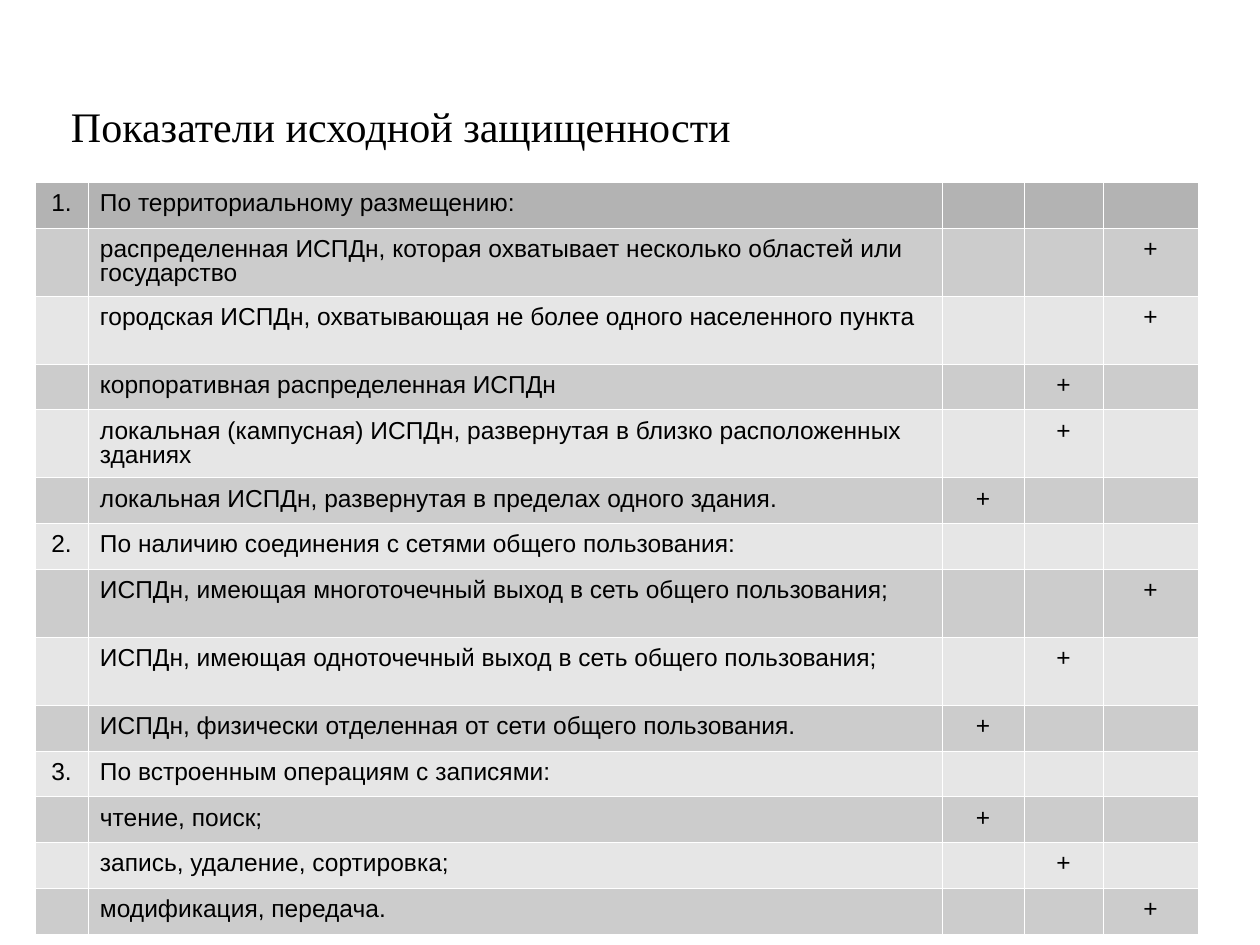
import dataclasses
import typing

import lxml.etree
import pptx
import pptx.dml.color
import pptx.enum.text
import pptx.oxml.ns
import pptx.util

SCALE = 914400 / 126
COLORS = {
    "ink": "000000",
    "line": "FFFFFF",
    "head": "B3B3B3",
    "dark": "CCCCCC",
    "light": "E6E6E6",
}
ALIGN = pptx.enum.text.PP_ALIGN
SHORT, TALL = 42, 68
COLS = (53, 854, 82, 79, 95)


@dataclasses.dataclass(frozen=True)
class Row:
    text: str
    mark: int = 0
    num: str = ""
    height: int = SHORT

    def cells(self) -> list[str]:
        return [self.num, self.text] + ["+" if self.mark == col else "" for col in (1, 2, 3)]


ROWS = (
    Row("По территориальному размещению:", num="1."),
    Row("распределенная ИСПДн, которая охватывает несколько областей или государство", 3, height=TALL),
    Row("городская ИСПДн, охватывающая не более одного населенного пункта", 3, height=TALL),
    Row("корпоративная распределенная ИСПДн", 2),
    Row("локальная (кампусная) ИСПДн, развернутая в близко расположенных зданиях", 2, height=TALL),
    Row("локальная ИСПДн, развернутая в пределах одного здания.", 1),
    Row("По наличию соединения с сетями общего пользования:", num="2."),
    Row("ИСПДн, имеющая многоточечный выход в сеть общего пользования;", 3, height=TALL),
    Row("ИСПДн, имеющая одноточечный выход в сеть общего пользования;", 2, height=TALL),
    Row("ИСПДн, физически отделенная от сети общего пользования.", 1),
    Row("По встроенным операциям с записями:", num="3."),
    Row("чтение, поиск;", 1),
    Row("запись, удаление, сортировка;", 2),
    Row("модификация, передача.", 3),
)


def px(size: int) -> int:
    return round(size * SCALE)


def apply(item: typing.Any, form: dict[str, typing.Any]) -> None:
    for name, value in form.items():
        setattr(item, name, value)


def rgb(name: str) -> pptx.dml.color.RGBColor:
    return pptx.dml.color.RGBColor.from_string(COLORS[name])


def write(par: typing.Any, text: str, face: str, size: int) -> None:
    run = par.add_run()
    run.text = text
    apply(run.font, {"name": face, "size": pptx.util.Pt(size), "bold": False})
    run.font.color.rgb = rgb("ink")


def border(cell: typing.Any) -> None:
    props = cell._tc.get_or_add_tcPr()
    name = pptx.oxml.ns.qn
    for side in ("lnL", "lnR", "lnT", "lnB"):
        line = lxml.etree.SubElement(props, name(f"a:{side}"), w="762")
        fill = lxml.etree.SubElement(line, name("a:solidFill"))
        lxml.etree.SubElement(fill, name("a:srgbClr"), val=COLORS["line"])


def draw_cell(cell: typing.Any, text: str, shade: str, align: typing.Any) -> None:
    apply(cell, {
        "margin_left": px(12),
        "margin_right": px(12),
        "margin_top": px(10),
        "margin_bottom": px(6),
    })
    border(cell)
    cell.fill.solid()
    cell.fill.fore_color.rgb = rgb(shade)
    par = cell.text_frame.paragraphs[0]
    apply(par, {"alignment": align, "line_spacing": 0.89})
    if text:
        write(par, text, "Arial", 14)
    else:
        lxml.etree.SubElement(par._p, pptx.oxml.ns.qn("a:endParaRPr"), sz="1400")


def draw_title(shape: typing.Any, text: str) -> None:
    apply(shape, {"left": px(58), "top": px(89), "width": px(1123), "height": px(89)})
    frame = shape.text_frame
    apply(frame, {
        "margin_left": px(13),
        "margin_right": px(13),
        "margin_top": px(11),
        "margin_bottom": px(6),
        "word_wrap": True,
        "auto_size": pptx.enum.text.MSO_AUTO_SIZE.NONE,
        "vertical_anchor": pptx.enum.text.MSO_ANCHOR.TOP,
    })
    par = frame.paragraphs[0]
    par.alignment = ALIGN.LEFT
    write(par, text, "Times New Roman", 24)


def draw_table(slide: typing.Any, rows: tuple[Row, ...]) -> None:
    high = sum(row.height for row in rows)
    frame = slide.shapes.add_table(
        len(rows), len(COLS), px(35), px(182), px(sum(COLS)), px(high)
    )
    table = frame.table
    for col, width in zip(table.columns, COLS):
        col.width = px(width)
    for i, row in enumerate(rows):
        table.rows[i].height = px(row.height)
        shade = "head" if i == 0 else ("light", "dark")[i % 2]
        for j, text in enumerate(row.cells()):
            align = ALIGN.LEFT if j == 1 else ALIGN.CENTER
            draw_cell(table.cell(i, j), text, shade, align)


def main() -> None:
    deck = pptx.Presentation()
    apply(deck, {"slide_width": px(1260), "slide_height": px(945)})
    slide = deck.slides.add_slide(deck.slide_layouts[5])
    draw_title(slide.shapes.title, "Показатели исходной защищенности")
    draw_table(slide, ROWS)
    deck.save("out.pptx")


if __name__ == "__main__":
    main()
